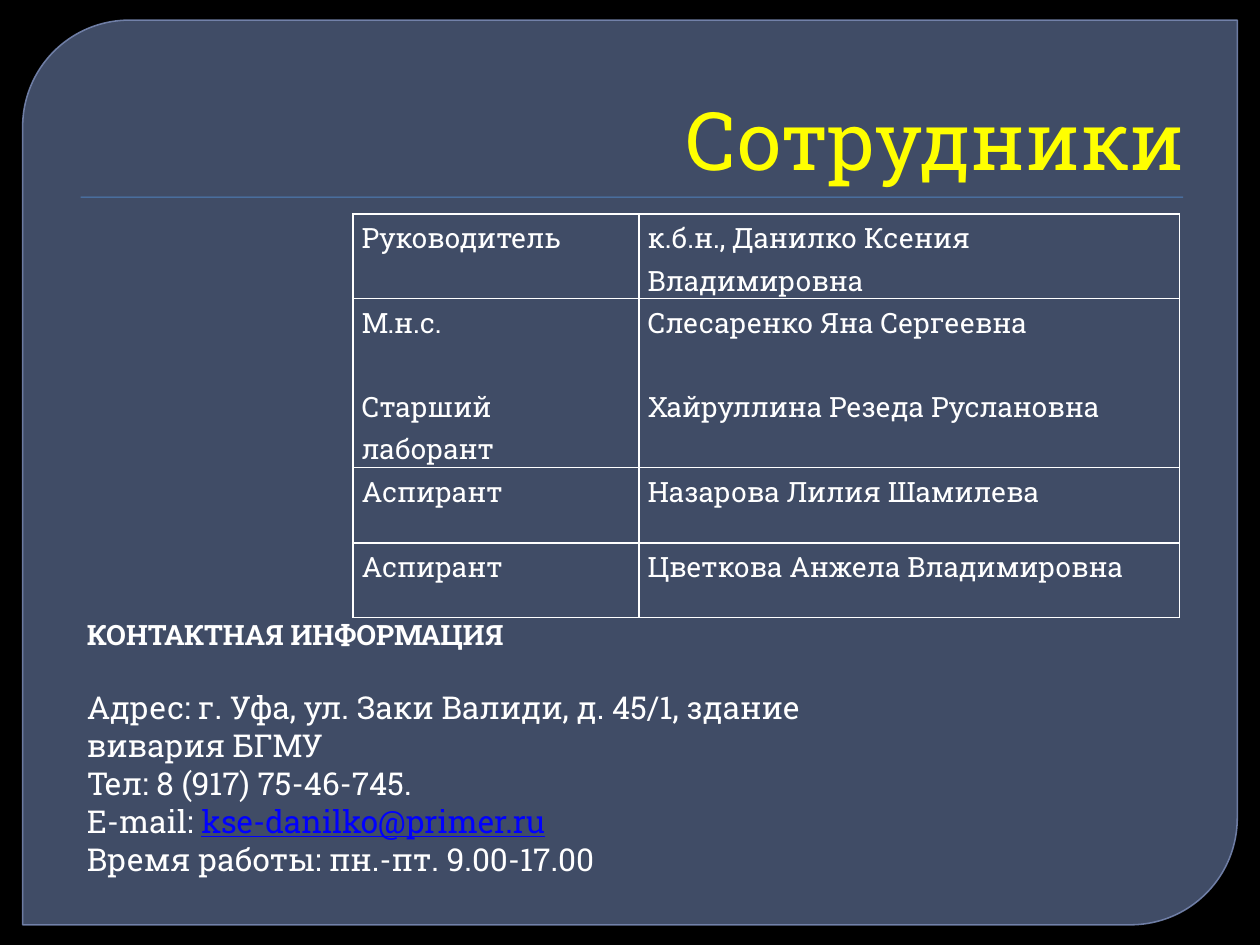
from dataclasses import dataclass

from lxml.etree import SubElement
from pptx import Presentation
from pptx.dml.color import RGBColor as Rgb
from pptx.enum.shapes import MSO_SHAPE as Shape
from pptx.enum.text import MSO_ANCHOR as Anchor, PP_ALIGN as Align
from pptx.oxml.ns import qn
from pptx.util import Inches, Pt


@dataclass(frozen=True)
class Theme:
    font: str = "Roboto Slab"
    back: str = "000000"
    panel: str = "63759D"
    edge: str = "7989B3"
    rule: str = "4F81BD"
    title: str = "FFFF00"
    text: str = "FFFFFF"
    link: str = "0000FF"
    big: int = 46
    body: int = 18
    small: int = 16


THEME = Theme()

STAFF = [
    (["Руководитель"], ["к.б.н., Данилко Ксения Владимировна"]),
    (["М.н.с.", "Старший лаборант"],
     ["Слесаренко Яна Сергеевна", "Хайруллина Резеда Руслановна"]),
    (["Аспирант"], ["Назарова Лилия Шамилева"]),
    (["Аспирант"], ["Цветкова Анжела Владимировна"]),
]
COLS = [2.27, 4.29]
ROWS = [0.67, 1.34, 0.6, 0.59]

HEAD = "КОНТАКТНАЯ ИНФОРМАЦИЯ"
CONTACT = [
    "Адрес: г. Уфа, ул. Заки Валиди, д. 45/1, здание вивария БГМУ",
    "Тел: 8 (917) 75-46-745.",
    "E-mail: ",
    "Время работы: пн.-пт. 9.00-17.00",
]
MAIL = "kse-danilko@primer.ru"


def write(para, text, size=THEME.body, color=THEME.text, bold=False,
          line=False, align=None, before=None, pitch=None):
    """Add a formatted run to a paragraph."""
    run = para.add_run()
    run.text = text
    font = run.font
    font.name, font.size = THEME.font, Pt(size)
    font.bold, font.underline = bold, line
    font.color.rgb = Rgb.from_string(color)
    if align is not None:
        para.alignment = align
    if before is not None:
        para.space_before = Pt(before)
    if pitch is not None:
        para.line_spacing = pitch


def paint(fill, color, alpha=None):
    """Set a solid fill, with opacity in percent if given."""
    fill.solid()
    fill.fore_color.rgb = Rgb.from_string(color)
    if alpha is not None:
        tone = next(fill._xPr.iter(qn("a:srgbClr")))
        SubElement(tone, qn("a:alpha"), val=str(alpha * 1000))


def frame(slide, box, anchor=Anchor.TOP):
    text = slide.shapes.add_textbox(*map(Inches, box)).text_frame
    text.word_wrap = True
    text.vertical_anchor = anchor
    return text


def add_panel(slide, box):
    panel = slide.shapes.add_shape(Shape.ROUND_2_DIAG_RECTANGLE, *map(Inches, box))
    panel.adjustments[0], panel.adjustments[1] = 0.118, 0
    panel.shadow.inherit = False
    paint(panel.fill, THEME.panel, 65)
    panel.line.width = Pt(0.87)
    paint(panel.line.fill, THEME.edge, 88)


def add_rule(slide, box):
    rule = slide.shapes.add_shape(Shape.RECTANGLE, *map(Inches, box))
    rule.shadow.inherit = False
    paint(rule.fill, THEME.rule)
    rule.line.fill.background()


def add_title(slide, box):
    text = frame(slide, box, Anchor.BOTTOM)
    write(text.paragraphs[0], "Сотрудники", size=THEME.big,
          color=THEME.title, align=Align.RIGHT)


def add_border(cell):
    props = cell._tc.get_or_add_tcPr()
    for i, side in enumerate(("lnL", "lnR", "lnT", "lnB")):
        edge = props.makeelement(qn(f"a:{side}"), {"w": str(Pt(1))})
        fill = SubElement(edge, qn("a:solidFill"))
        SubElement(fill, qn("a:srgbClr"), val=THEME.text)
        props.insert(i, edge)


def add_staff(slide, box):
    table = slide.shapes.add_table(len(ROWS), len(COLS), *map(Inches, box)).table
    table.first_row = table.horz_banding = False
    for col, width in zip(table.columns, COLS):
        col.width = Inches(width)
    for row, height, people in zip(table.rows, ROWS, STAFF):
        row.height = Inches(height)
        for cell, lines in zip(row.cells, people):
            cell.margin_left = cell.margin_right = Inches(0.07)
            cell.margin_top = cell.margin_bottom = 0
            cell.fill.background()
            add_border(cell)
            text = cell.text_frame
            for i, line in enumerate(lines):
                para = text.add_paragraph() if i else text.paragraphs[0]
                write(para, line, size=THEME.small, pitch=1.15,
                      before=24 if i else 0)


def add_contact(slide, box):
    text = frame(slide, box)
    write(text.paragraphs[0], HEAD, size=THEME.small, bold=True)
    for i, line in enumerate(CONTACT):
        para = text.add_paragraph()
        write(para, line, before=0 if i else 21.5)
        if line.startswith("E-mail"):
            write(para, MAIL, color=THEME.link, line=True)


def main():
    deck = Presentation()
    deck.slide_width, deck.slide_height = Inches(10), Inches(7.5)
    slide = deck.slides.add_slide(deck.slide_layouts[6])
    paint(slide.background.fill, THEME.back)

    # Backdrop
    add_panel(slide, (0.18, 0.16, 9.64, 7.18))
    add_rule(slide, (0.64, 1.56, 8.75, 0.01))

    # Content
    add_title(slide, (0.5, 0.28, 9, 1.25))
    add_staff(slide, (2.8, 1.7, sum(COLS), sum(ROWS)))
    add_contact(slide, (0.59, 4.85, 6.69, 2.19))

    deck.save("out.pptx")


if __name__ == "__main__":
    main()
